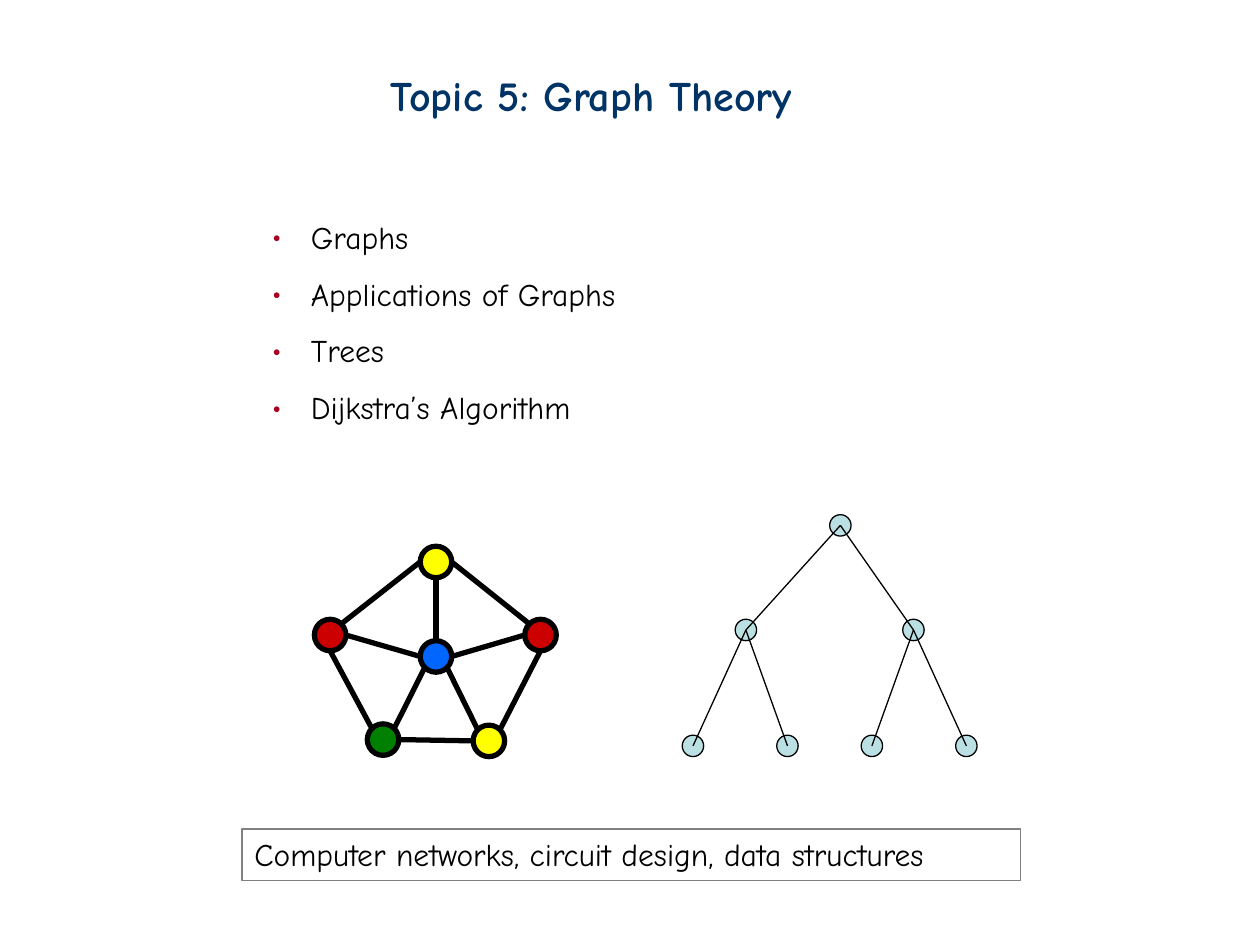
from math import cos, radians, sin

from lxml.etree import SubElement
from pptx import Presentation
from pptx.dml.color import RGBColor
from pptx.enum.shapes import MSO_CONNECTOR, MSO_SHAPE
from pptx.enum.text import MSO_ANCHOR, PP_ALIGN
from pptx.oxml.ns import qn
from pptx.util import Inches, Pt

FONT = "Comic Neue"
BLACK = RGBColor(0x00, 0x00, 0x00)
GREY = RGBColor(0x80, 0x80, 0x80)
NAVY = RGBColor(0x00, 0x33, 0x66)
CRIMSON = RGBColor(0xA5, 0x00, 0x21)
GREEN = RGBColor(0x00, 0x80, 0x00)
RED = RGBColor(0xCC, 0x00, 0x00)
YELLOW = RGBColor(0xFF, 0xFF, 0x00)
BLUE = RGBColor(0x00, 0x66, 0xFF)
PALE = RGBColor(0xBB, 0xE0, 0xE3)

TOPICS = ["Graphs", "Applications of Graphs", "Trees", "Dijkstra’s Algorithm"]

GRAPH_SIZE = 0.25
GRAPH_NODES = {
    "left": (2.62, 5.04, RED),
    "right": (4.29, 5.04, RED),
    "top": (3.46, 4.46, YELLOW),
    "hub": (3.46, 5.21, BLUE),
    "foot_left": (3.04, 5.87, GREEN),
    "foot_right": (3.88, 5.88, YELLOW),
}
GRAPH_EDGES = [
    ("foot_left", 6, "foot_right", 2),
    ("top", 6, "right", 1),
    ("right", 4, "foot_right", 7),
    ("top", 2, "left", 7),
    ("left", 4, "foot_left", 1),
    ("top", 4, "hub", 0),
    ("hub", 6, "right", 2),
    ("hub", 5, "foot_right", 1),
    ("hub", 3, "foot_left", 7),
    ("hub", 2, "left", 6),
]

TREE_SIZE = 0.17
TREE_NODES = [(6.67, 4.17), (5.92, 5), (7.25, 5),
              (5.5, 5.92), (6.25, 5.92), (6.92, 5.92), (7.67, 5.92)]


def place(shape, left, top, width, height):
    """Set the position and size of a shape in inches."""
    shape.left, shape.top = Inches(left), Inches(top)
    shape.width, shape.height = Inches(width), Inches(height)


def write(p, text, size=18, color=BLACK, bold=False, spacing=None):
    """Put formatted left-aligned text into a paragraph."""
    p.alignment = PP_ALIGN.LEFT
    if spacing:
        p.line_spacing = spacing
    r = p.add_run()
    r.text = text
    r.font.name, r.font.size, r.font.bold = FONT, Pt(size), bold
    r.font.color.rgb = color


def add_bullet(p, color, indent):
    """Give a paragraph a coloured bullet with a hanging indent."""
    pPr = p._p.get_or_add_pPr()
    pPr.set("marL", str(Inches(indent)))
    pPr.set("indent", str(-Inches(indent)))
    clr = SubElement(pPr, qn("a:buClr"))
    SubElement(clr, qn("a:srgbClr"), val=str(color))
    SubElement(pPr, qn("a:buFont"), typeface=FONT)
    SubElement(pPr, qn("a:buChar"), char="•")


def add_title(s, text):
    """Fill and place the title placeholder."""
    sp = s.shapes.title
    place(sp, 3, 0.5, 3.91, 0.5)
    tf = sp.text_frame
    tf.word_wrap = True
    tf.vertical_anchor = MSO_ANCHOR.TOP
    write(tf.paragraphs[0], text, size=24, color=NAVY, bold=True)


def add_topics(s, topics):
    """Add the bulleted list of topics."""
    sp = s.shapes.add_textbox(Inches(2.06), Inches(1.53), Inches(3.04), Inches(2.32))
    tf = sp.text_frame
    tf.word_wrap = True
    for i, topic in enumerate(topics):
        p = tf.add_paragraph() if i else tf.paragraphs[0]
        write(p, topic, spacing=1.5)
        add_bullet(p, CRIMSON, 0.31)


def add_caption(s, text):
    """Add the outlined caption box."""
    sp = s.shapes.add_shape(MSO_SHAPE.RECTANGLE, 0, 0, 0, 0)
    place(sp, 1.92, 6.58, 6.18, 0.41)
    sp.shadow.inherit = False
    sp.fill.background()
    sp.line.color.rgb, sp.line.width = GREY, Pt(0.75)
    tf = sp.text_frame
    tf.word_wrap = True
    tf.vertical_anchor = MSO_ANCHOR.TOP
    write(tf.paragraphs[0], text)


def add_node(shapes, x, y, size, color, weight):
    """Add a round node centred at x, y."""
    sp = shapes.add_shape(MSO_SHAPE.OVAL, 0, 0, 0, 0)
    place(sp, x - size / 2, y - size / 2, size, size)
    sp.shadow.inherit = False
    sp.fill.solid()
    sp.fill.fore_color.rgb = color
    sp.line.color.rgb, sp.line.width = BLACK, Pt(weight)


def add_edge(shapes, start, end, weight):
    """Add a straight black line between two points."""
    points = [Inches(v) for v in (*start, *end)]
    line = shapes.add_connector(MSO_CONNECTOR.STRAIGHT, *points)
    line.line.color.rgb, line.line.width = BLACK, Pt(weight)
    SubElement(line._element.spPr, qn("a:effectLst"))


def rim_point(name, site):
    """Return one of eight rim points, counted anticlockwise from the top."""
    x, y, _ = GRAPH_NODES[name]
    angle = radians(90 + 45 * site)
    return x + GRAPH_SIZE / 2 * cos(angle), y - GRAPH_SIZE / 2 * sin(angle)


def add_graph(s):
    """Add the coloured wheel graph as a group."""
    shapes = s.shapes.add_group_shape().shapes
    for x, y, color in GRAPH_NODES.values():
        add_node(shapes, x, y, GRAPH_SIZE, color, 3)
    for a, site_a, b, site_b in GRAPH_EDGES:
        add_edge(shapes, rim_point(a, site_a), rim_point(b, site_b), 3)


def add_tree(s):
    """Add the binary tree, its nodes stored level by level."""
    for x, y in TREE_NODES:
        add_node(s.shapes, x, y, TREE_SIZE, PALE, 0.75)
    for i, child in enumerate(TREE_NODES[1:]):
        add_edge(s.shapes, TREE_NODES[i // 2], child, 0.75)


def main():
    """Build and save the slide."""
    prs = Presentation()
    prs.slide_width, prs.slide_height = Inches(10), Inches(7.5)
    s = prs.slides.add_slide(prs.slide_layouts[5])
    add_title(s, "Topic 5: Graph Theory")
    add_topics(s, TOPICS)
    add_caption(s, "Computer networks, circuit design, data structures")
    add_graph(s)
    add_tree(s)
    prs.save("out.pptx")


if __name__ == "__main__":
    main()
